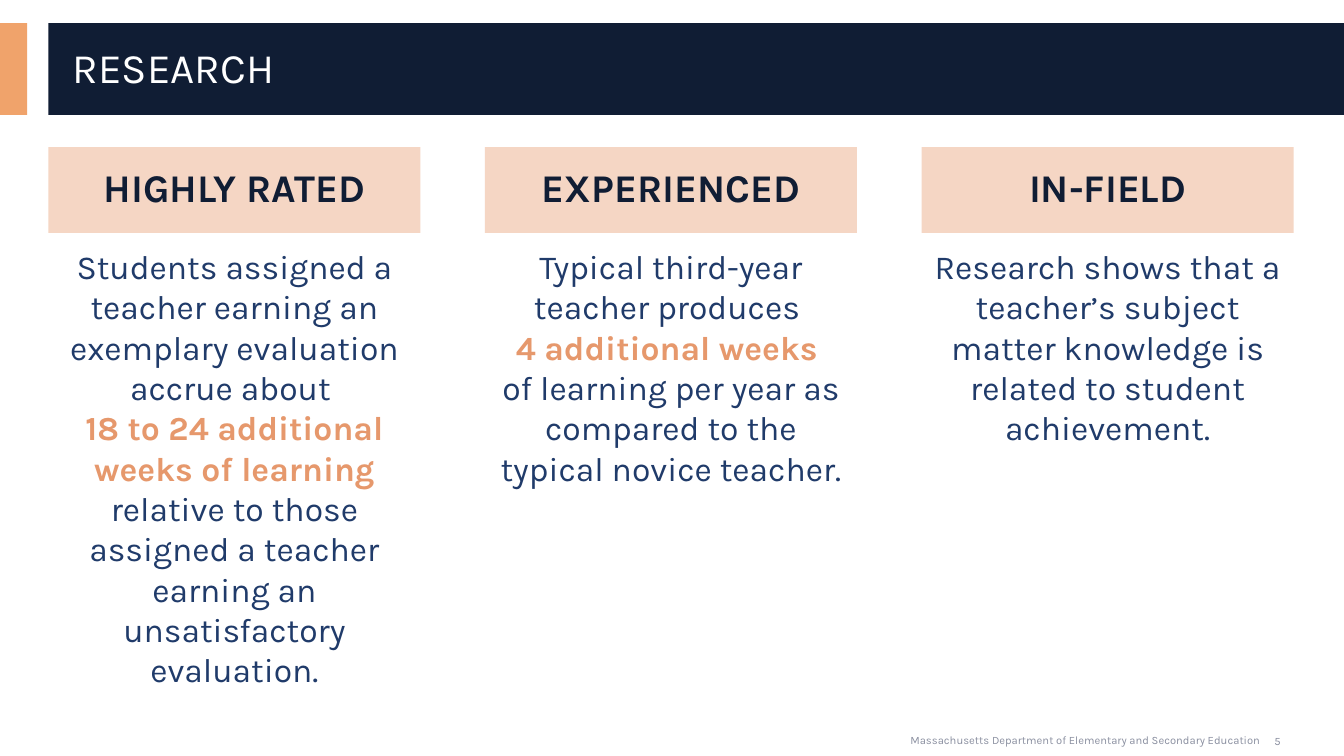
import pptx
import pptx.dml.color
import pptx.enum.shapes
import pptx.enum.text
import pptx.oxml.ns
import pptx.util
from lxml import etree

Inches = pptx.util.Inches
Align = pptx.enum.text.PP_ALIGN
Anchor = pptx.enum.text.MSO_ANCHOR

NAVY = pptx.dml.color.RGBColor(0x10, 0x1D, 0x34)
BLUE = pptx.dml.color.RGBColor(0x20, 0x3B, 0x6A)
ORANGE = pptx.dml.color.RGBColor(0xF0, 0xA3, 0x6B)
ACCENT = pptx.dml.color.RGBColor(0xE6, 0x98, 0x6C)
PEACH = pptx.dml.color.RGBColor(0xF5, 0xD6, 0xC4)
GRAY = pptx.dml.color.RGBColor(0x8A, 0x8F, 0xA0)
WHITE = pptx.dml.color.RGBColor(0xFF, 0xFF, 0xFF)

FONT = "Karla"
COMPARISON_LAYOUT = 4
COLUMN_LEFT, COLUMN_STEP, COLUMN_WIDTH = 0.48, 4.33, 3.69

# Each column: heading, then the lines of text as lists of (words, emphasised).
COLUMNS = [
    ("HIGHLY RATED", [
        [("Students assigned a teacher earning an exemplary evaluation accrue about ", False)],
        [("18 to 24 additional weeks of learning ", True),
         ("relative to those assigned a teacher earning an unsatisfactory evaluation.", False)],
    ]),
    ("EXPERIENCED", [
        [("Typical third-year teacher produces ", False)],
        [("4 additional weeks ", True)],
        [("of learning per year as compared to the typical novice teacher.", False)],
    ]),
    ("IN-FIELD", [
        [("Research shows that a teacher’s subject matter knowledge is "
          "related to student achievement.", False)],
    ]),
]


class SlideBuilder:
    def __init__(self, presentation):
        self.slide = presentation.slides.add_slide(presentation.slide_layouts[COMPARISON_LAYOUT])
        self.bodies = [shape for shape in self.slide.placeholders
                       if shape.placeholder_format.idx in range(1, 5)]

    def format_text(self, shape, size, color, bold=False, align=Align.LEFT,
                    anchor=Anchor.MIDDLE, spacing=1.0):
        frame = shape.text_frame
        frame.word_wrap = True
        frame.auto_size = pptx.enum.text.MSO_AUTO_SIZE.NONE
        frame.vertical_anchor = anchor
        paragraph = frame.paragraphs[0]
        paragraph.alignment = align
        paragraph.line_spacing = spacing
        paragraph.space_before = pptx.util.Pt(0)
        paragraph.font.name = FONT
        paragraph.font.size = pptx.util.Pt(size)
        paragraph.font.bold = bold
        paragraph.font.color.rgb = color
        return paragraph

    def place(self, shape, left, top, width, height):
        shape.left, shape.top = Inches(left), Inches(top)
        shape.width, shape.height = Inches(width), Inches(height)

    def bar(self, left, top, width, height, color):
        shape = self.slide.shapes.add_shape(
            pptx.enum.shapes.MSO_SHAPE.RECTANGLE,
            Inches(left), Inches(top), Inches(width), Inches(height))
        shape.shadow.inherit = False
        shape.fill.solid()
        shape.fill.fore_color.rgb = color
        shape.line.fill.background()
        return shape

    def title(self, text):
        title = self.slide.shapes.title
        title.element.getparent().append(title.element)  # in front of the bar
        self.place(title, 0.62, 0.32, 12.5, 0.74)
        title.text_frame.text = text
        self.format_text(title, 30, WHITE, spacing=0.9)

    def heading(self, text, left):
        shape = self.bar(left, 1.46, COLUMN_WIDTH, 0.85, PEACH)
        shape.text_frame.text = text
        self.format_text(shape, 28, NAVY, bold=True, align=Align.CENTER, spacing=0.9)

    def body(self, lines, left):
        shape = self.bodies.pop(0)
        self.place(shape, left, 2.39, COLUMN_WIDTH, 4.15)
        paragraph = self.format_text(shape, 24, BLUE, align=Align.CENTER, anchor=Anchor.TOP)
        self.remove_bullet(paragraph)
        for number, line in enumerate(lines):
            if number:
                paragraph.add_line_break()
            for words, emphasised in line:
                run = paragraph.add_run()
                run.text = words
                run.font.bold = emphasised
                run.font.color.rgb = ACCENT if emphasised else BLUE

    def remove_bullet(self, paragraph):
        properties = paragraph._p.get_or_add_pPr()
        properties.set("marL", "0")
        properties.set("indent", "0")
        bullet = etree.Element(pptx.oxml.ns.qn("a:buNone"))
        properties.find(pptx.oxml.ns.qn("a:defRPr")).addprevious(bullet)

    def small_print(self, text, left, top, width, height, align=Align.LEFT, anchor=Anchor.TOP):
        box = self.slide.shapes.add_textbox(
            Inches(left), Inches(top), Inches(width), Inches(height))
        box.text_frame.text = text
        self.format_text(box, 8, GRAY, align=align, anchor=anchor)

    def remove_unused_bodies(self):
        for shape in self.bodies:
            shape.element.getparent().remove(shape.element)


def main():
    presentation = pptx.Presentation()
    presentation.slide_width = Inches(13.33)
    presentation.slide_height = Inches(7.5)

    builder = SlideBuilder(presentation)
    builder.bar(0, 0.23, 0.27, 0.91, ORANGE)
    builder.bar(0.48, 0.23, 12.85, 0.91, NAVY)
    builder.title("RESEARCH")
    for index, (heading, lines) in enumerate(COLUMNS):
        left = COLUMN_LEFT + index * COLUMN_STEP
        builder.heading(heading, left)
        builder.body(lines, left)
    builder.remove_unused_bodies()
    builder.small_print("Massachusetts Department of Elementary and Secondary Education",
                        8.93, 7.23, 3.99, 0.24)
    builder.small_print("5", 12.42, 7.15, 0.5, 0.4, Align.CENTER, Anchor.MIDDLE)
    presentation.save("out.pptx")


if __name__ == "__main__":
    main()
